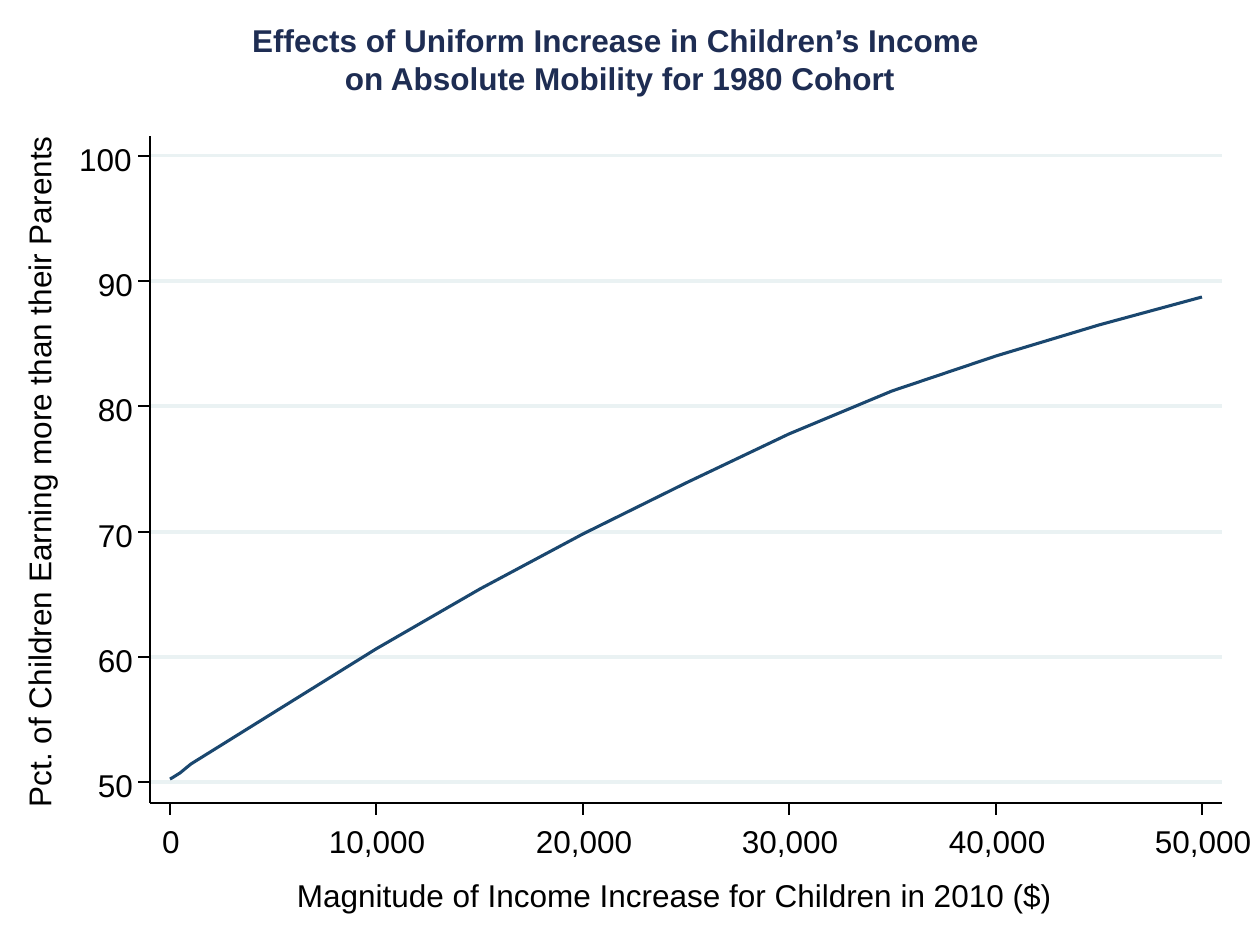
from lxml import etree
from pptx import Presentation
from pptx import util as u
from pptx.dml.color import RGBColor
from pptx.enum import shapes, text
from pptx.oxml import ns

PX_PER_INCH = 126
SLIDE_WIDTH, SLIDE_HEIGHT = 1260, 945

WHITE = RGBColor(0xFF, 0xFF, 0xFF)
BLACK = RGBColor(0x00, 0x00, 0x00)
NAVY = RGBColor(0x1E, 0x2D, 0x53)
CURVE_BLUE = RGBColor(0x1A, 0x47, 0x6F)
GRID = RGBColor(0xEA, 0xF2, 0xF3)
THIN, THICK = 0.88, 1.75

TITLE_LINES = ["Effects of Uniform Increase in Children’s Income ",
               "on Absolute Mobility for 1980 Cohort"]

# Income increase in dollars, and share of children earning more than their parents
INCREASES = [0, 100, 500, 1000, *range(5000, 50001, 5000)]
SHARES = [50.2, 50.3, 50.7, 51.4, 55.5, 60.6, 65.4,
          69.8, 73.9, 77.8, 81.2, 84, 86.5, 88.7]
INCREASE_TICKS = range(0, 50001, 10000)
SHARE_TICKS = range(50, 101, 10)

PLOT_LEFT, PLOT_TOP, PLOT_RIGHT, PLOT_BOTTOM = 150, 136, 1222, 803
TICK_LENGTH = 12
LABEL_HEIGHT = 45


def px(length):
    return u.Emu(round(length * 914400 / PX_PER_INCH))


def assign(target, values):
    for name, value in values.items():
        setattr(target, name, value)


def increase_x(increase):
    return round(170 + increase * 1032 / 50000)


def share_y(share):
    return round(782 - (share - 50) * 626 / 50)


class SlideBuilder:
    """Holds the text style and the slide being filled."""

    font_format = {"name": "Arial", "size": u.Pt(18), "bold": False}
    frame_format = {"margin_left": 0, "margin_right": 0,
                    "margin_top": 0, "margin_bottom": 0,
                    "vertical_anchor": text.MSO_ANCHOR.TOP}

    def __init__(self, presentation):
        self.slide = presentation.slides.add_slide(presentation.slide_layouts[5])

    def style_font(self, font, color=BLACK, **changes):
        assign(font, {**self.font_format, **changes})
        font.color.rgb = color

    def style_line(self, line, color, width):
        line.color.rgb = color
        line.width = u.Pt(width)

    def panel(self, left, top, width, height):
        shape = self.slide.shapes.add_shape(
            shapes.MSO_SHAPE.RECTANGLE, px(left), px(top), px(width), px(height))
        shape.shadow.inherit = False
        shape.fill.solid()
        shape.fill.fore_color.rgb = WHITE
        self.style_line(shape.line, WHITE, THIN)

    def line(self, start, end, color=BLACK, width=THIN):
        connector = self.slide.shapes.add_connector(
            shapes.MSO_CONNECTOR.STRAIGHT, *map(px, (*start, *end)))
        etree.SubElement(connector._element.spPr, ns.qn("a:effectLst"))
        self.style_line(connector.line, color, width)

    def curve(self, points):
        start, *others = [(px(x), px(y)) for x, y in points]
        builder = self.slide.shapes.build_freeform(*start)
        builder.add_line_segments(others, close=False)
        shape = builder.convert_to_shape()
        shape.shadow.inherit = False
        shape.fill.background()
        self.style_line(shape.line, CURVE_BLUE, THICK)

    def label(self, words, left, top, width, height=LABEL_HEIGHT, rotation=0):
        box = self.slide.shapes.add_textbox(px(left), px(top), px(width), px(height))
        box.rotation = rotation
        frame = box.text_frame
        assign(frame, {**self.frame_format, "word_wrap": False,
                       "auto_size": text.MSO_AUTO_SIZE.SHAPE_TO_FIT_TEXT})
        frame.text = words
        self.style_font(frame.paragraphs[0].runs[0].font)

    def title(self, lines, left, top, width, height):
        """Fill the title placeholder and bring it in front of the panels."""
        title = self.slide.shapes.title
        self.slide.shapes._spTree.append(title._element)
        assign(title, {"left": px(left), "top": px(top),
                       "width": px(width), "height": px(height)})
        frame = title.text_frame
        assign(frame, {**self.frame_format, "word_wrap": True,
                       "auto_size": text.MSO_AUTO_SIZE.NONE})
        frame.text = "\n".join(lines)
        for paragraph in frame.paragraphs:
            paragraph.alignment = text.PP_ALIGN.CENTER
            self.style_font(paragraph.runs[0].font, NAVY, bold=True)


def draw_share_axis(builder):
    builder.line((PLOT_LEFT, PLOT_BOTTOM), (PLOT_LEFT, PLOT_TOP))
    for share in SHARE_TICKS:
        y = share_y(share)
        builder.line((PLOT_LEFT, y), (PLOT_LEFT - TICK_LENGTH, y))
        width = 69 if share == 100 else 50
        builder.label(str(share), 148 - width, y - 16, width)
    builder.label("Pct. of Children Earning more than their Parents",
                  -317, 425, 719, rotation=270)


def draw_increase_axis(builder):
    builder.line((PLOT_LEFT, PLOT_BOTTOM), (PLOT_RIGHT, PLOT_BOTTOM))
    for increase in INCREASE_TICKS:
        x = increase_x(increase)
        builder.line((x, PLOT_BOTTOM), (x, PLOT_BOTTOM + TICK_LENGTH))
        offset, width = (47, 115) if increase else (8, 33)
        builder.label(f"{increase:,}", x - offset, 822, width)
    builder.label("Magnitude of Income Increase for Children in 2010 ($)",
                  297, 876, 756, 38)


def main():
    presentation = Presentation()
    assign(presentation, {"slide_width": px(SLIDE_WIDTH),
                          "slide_height": px(SLIDE_HEIGHT)})
    builder = SlideBuilder(presentation)
    builder.panel(0, 23, 1249, 908)
    builder.panel(PLOT_LEFT, PLOT_TOP, PLOT_RIGHT - PLOT_LEFT, PLOT_BOTTOM - PLOT_TOP)
    for share in SHARE_TICKS:
        y = share_y(share)
        builder.line((PLOT_LEFT, y), (PLOT_RIGHT, y), GRID, THICK)
    builder.curve(zip(map(increase_x, INCREASES), map(share_y, SHARES)))
    draw_share_axis(builder)
    draw_increase_axis(builder)
    builder.title(TITLE_LINES, -10, 21, 1260, 77)
    presentation.save("out.pptx")


if __name__ == "__main__":
    main()
